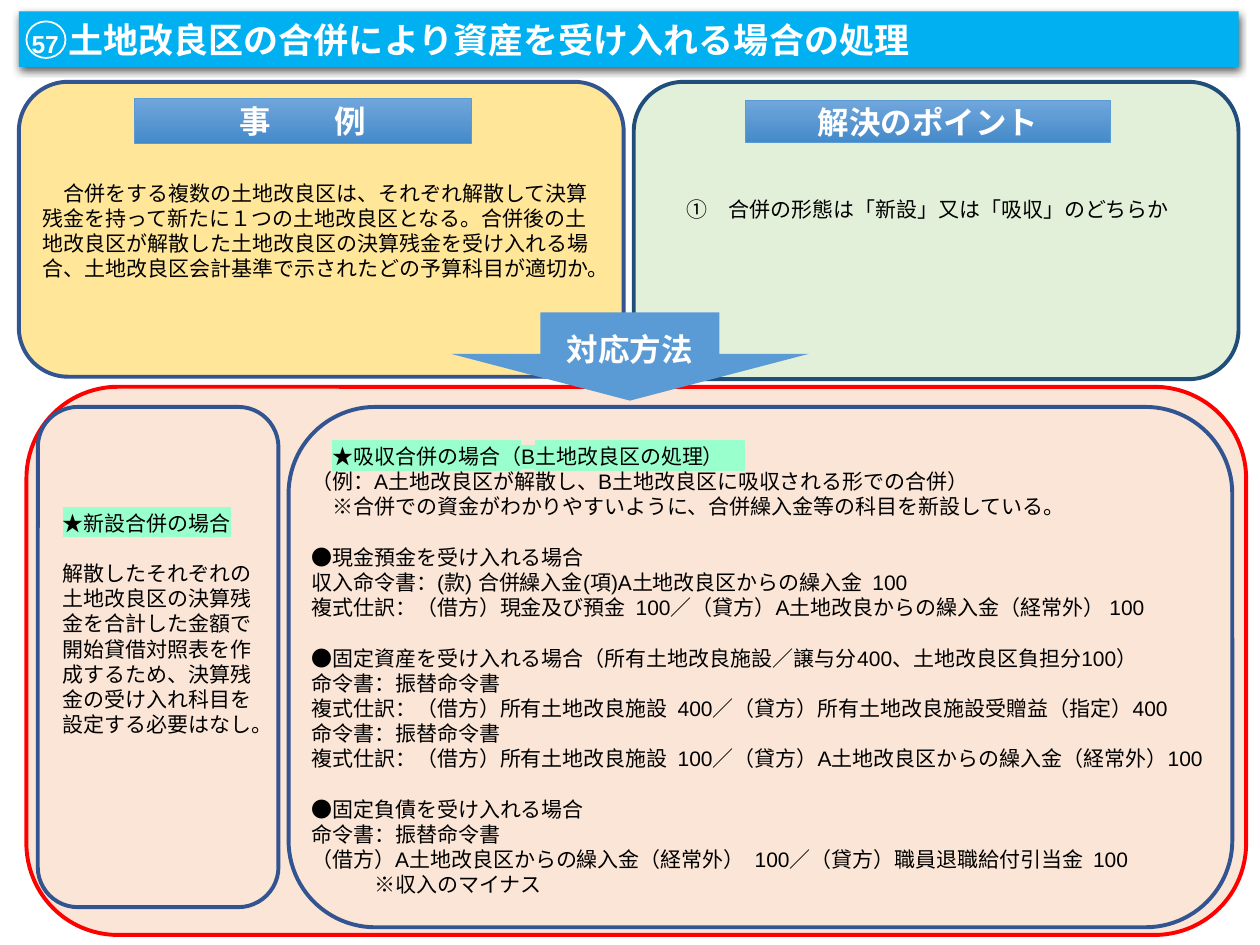
import pptx
import pptx.util
import pptx.dml.color
import pptx.enum.shapes
import pptx.enum.text
import pptx.oxml.ns
from lxml import etree

RGBColor = pptx.dml.color.RGBColor
Pt = pptx.util.Pt
SHAPE = pptx.enum.shapes.MSO_SHAPE
ANCHOR = pptx.enum.text.MSO_ANCHOR
ALIGN = pptx.enum.text.PP_ALIGN
qn = pptx.oxml.ns.qn

WHITE = RGBColor(0xFF, 0xFF, 0xFF)
BLACK = RGBColor(0x00, 0x00, 0x00)
SKY = RGBColor(0x00, 0xB0, 0xF0)
RED = RGBColor(0xFF, 0x00, 0x00)
PEACH = RGBColor(0xFB, 0xE5, 0xD6)
GREEN = RGBColor(0xE2, 0xF0, 0xD9)
YELLOW = RGBColor(0xFF, 0xE6, 0x99)
NAVY = RGBColor(0x32, 0x54, 0x91)
DEEP_BLUE = RGBColor(0x1F, 0x4E, 0x79)
BLUE = RGBColor(0x5B, 0x9B, 0xD5)
BLUE_LIGHT = RGBColor(0x71, 0xA6, 0xDB)
BLUE_DARK = RGBColor(0x44, 0x8A, 0xCA)
MINT = RGBColor(0x99, 0xFF, 0xCC)

COLUMNS, ROWS = 100, 75
CELL = pptx.util.Inches(10) // COLUMNS
LATIN, ASIAN = "Arial", "Noto Sans CJK JP"
BODY_SIZE, LINE_PITCH = 12, 14.4

CASE = ["合併をする複数の土地改良区は、それぞれ解散して決算残金を持って新たに１つの土地改良区となる。"
        "合併後の土地改良区が解散した土地改良区の決算残金を受け入れる場合、"
        "土地改良区会計基準で示されたどの予算科目が適切か。"]
POINT = ["①　合併の形態は「新設」又は「吸収」のどちらか"]
NEW_MERGER = [
    ["★新設合併の場合"],
    ["解散したそれぞれの土地改良区の決算残金を合計した金額で開始貸借対照表を作成するため、"
     "決算残金の受け入れ科目を設定する必要はなし。"],
]
ABSORPTION = [
    ["★吸収合併の場合（B土地改良区の処理）　",
     "（例：A土地改良区が解散し、B土地改良区に吸収される形での合併）",
     "※合併での資金がわかりやすいように、合併繰入金等の科目を新設している。"],
    ["●現金預金を受け入れる場合",
     "収入命令書：(款) 合併繰入金(項)A土地改良区からの繰入金  100",
     "複式仕訳：（借方）現金及び預金  100／（貸方）A土地改良からの繰入金（経常外） 100"],
    ["●固定資産を受け入れる場合（所有土地改良施設／譲与分400、土地改良区負担分100）",
     "命令書：振替命令書",
     "複式仕訳：（借方）所有土地改良施設  400／（貸方）所有土地改良施設受贈益（指定）400",
     "命令書：振替命令書",
     "複式仕訳：（借方）所有土地改良施設  100／（貸方）A土地改良区からの繰入金（経常外）100"],
    ["●固定負債を受け入れる場合",
     "命令書：振替命令書",
     "（借方）A土地改良区からの繰入金（経常外）  100／（貸方）職員退職給付引当金  100",
     "※収入のマイナス"],
]


def grid(*cells):
    return [round(cell * CELL) for cell in cells]


def move(shape, area):
    shape.left, shape.top, shape.width, shape.height = grid(*area)


def set_font(paragraph, size, color, bold=False):
    font = paragraph.font
    font.size, font.bold, font.name = Pt(size), bold, LATIN
    font.color.rgb = color
    properties = paragraph._p.pPr.find(qn("a:defRPr"))
    properties.find(qn("a:latin")).addnext(
        properties.makeelement(qn("a:ea"), {"typeface": ASIAN}))


def highlight(run, color):
    properties = run._r.get_or_add_rPr()
    mark = etree.SubElement(properties, qn("a:highlight"))
    etree.SubElement(mark, qn("a:srgbClr"), val=str(color))


def add_panel(slide, kind, area, fill=None, line=None, width=2.25):
    shape = slide.shapes.add_shape(kind, *grid(*area))
    shape.shadow.inherit = False
    if fill is None:
        shape.fill.background()
    else:
        shape.fill.solid()
        shape.fill.fore_color.rgb = fill
    if line is None:
        shape.line.fill.background()
    else:
        shape.line.color.rgb = line
        shape.line.width = Pt(width)
    return shape


def write_label(shape, text):
    frame = shape.text_frame
    frame.word_wrap = False
    frame.vertical_anchor = ANCHOR.MIDDLE
    paragraph = frame.paragraphs[0]
    paragraph.text = text
    paragraph.alignment = ALIGN.CENTER
    set_font(paragraph, 18, WHITE, True)


def add_heading(slide, area, text):
    shape = add_panel(slide, SHAPE.RECTANGLE, area, BLUE, BLUE, 0.5)
    shape.fill.gradient()
    shape.fill.gradient_angle = 270
    for stop, color in zip(shape.fill.gradient_stops, (BLUE_LIGHT, BLUE_DARK)):
        stop.color.rgb = color
    write_label(shape, text)


def write_body(shape, groups, indents=None, marked=False):
    frame = shape.text_frame
    frame.word_wrap = True
    frame.vertical_anchor = ANCHOR.TOP
    frame.auto_size = pptx.enum.text.MSO_AUTO_SIZE.NONE
    lines = [(text, group and not row) for group, texts in enumerate(groups)
             for row, text in enumerate(texts)]
    for index, (text, starts_group) in enumerate(lines):
        paragraph = frame.paragraphs[0] if index == 0 else frame.add_paragraph()
        run = paragraph.add_run()
        run.text = text
        paragraph.alignment = ALIGN.LEFT
        paragraph.line_spacing = Pt(LINE_PITCH)
        paragraph.space_before = Pt(LINE_PITCH if starts_group else 0)
        properties = paragraph._p.get_or_add_pPr()
        properties.set("marL", "0")
        properties.set("indent", str(Pt(BODY_SIZE * (indents or {}).get(index, 0))))
        etree.SubElement(properties, qn("a:buNone"))
        set_font(paragraph, BODY_SIZE, BLACK)
        if marked and index == 0:
            highlight(run, MINT)


def add_body(slide, area, groups, **options):
    write_body(slide.shapes.add_textbox(*grid(*area)), groups, **options)


def add_title(slide):
    title = slide.shapes.title
    move(title, (1.5, 0.9, 96.8, 4.4))
    title.fill.solid()
    title.fill.fore_color.rgb = SKY
    frame = title.text_frame
    frame.vertical_anchor = ANCHOR.MIDDLE
    paragraph = frame.paragraphs[0]
    paragraph.alignment = ALIGN.LEFT
    set_font(paragraph, 20, WHITE, True)
    number = paragraph.add_run()
    number.text = "57"
    number.font.size = Pt(14)
    paragraph.add_run().text = " 土地改良区の合併により資産を受け入れる場合の処理"
    effects = etree.SubElement(title._element.spPr, qn("a:effectLst"))
    shadow = etree.SubElement(effects, qn("a:outerShdw"), blurRad=str(Pt(4.5)),
                              dist=str(Pt(1.5)), dir="5400000", rotWithShape="0")
    color = etree.SubElement(shadow, qn("a:srgbClr"), val=str(BLACK))
    etree.SubElement(color, qn("a:alpha"), val="63000")
    add_panel(slide, SHAPE.OVAL, (2.1, 1.7, 3.1, 2.9), line=WHITE, width=1)


def add_arrow(slide):
    arrow = add_panel(slide, SHAPE.DOWN_ARROW, (35.8, 24.8, 28.4, 7), BLUE)
    arrow.adjustments[1] = 0.53
    write_label(slide.shapes.add_textbox(*grid(43.8, 25.7, 12.4, 4)), "対応方法")


def main():
    presentation = pptx.Presentation()
    presentation.slide_width, presentation.slide_height = grid(COLUMNS, ROWS)
    slide = presentation.slides.add_slide(presentation.slide_layouts[1])
    rounded = SHAPE.ROUNDED_RECTANGLE

    add_title(slide)
    add_panel(slide, rounded, (2.1, 30.7, 96.8, 43.5), PEACH, RED)
    add_panel(slide, rounded, (50.3, 6.5, 48, 23.6), GREEN, DEEP_BLUE)
    add_body(slide, (53.5, 15.1, 41.6, 5), [POINT])
    add_heading(slide, (59.2, 8, 28.9, 3.3), "解決のポイント")
    add_panel(slide, rounded, (1.5, 6.5, 48, 23.4), YELLOW, NAVY)
    add_body(slide, (2.4, 13.8, 46.2, 9.1), [CASE], indents={0: 1})
    add_heading(slide, (10.7, 7.8, 26.7, 3.6), "事　　例")
    add_arrow(slide)
    add_panel(slide, rounded, (3, 32.3, 19.1, 39.7), line=NAVY)
    add_body(slide, (4, 40, 18, 21.2), NEW_MERGER, marked=True)
    add_panel(slide, rounded, (22.9, 32.3, 74.9, 41.3), line=NAVY)
    body = slide.placeholders[1]
    move(body, (23.7, 34.7, 75.2, 37.4))
    write_body(body, ABSORPTION, indents={0: 1, 2: 1, 14: 3}, marked=True)
    slide.shapes._spTree.append(body._element)
    presentation.save("out.pptx")


if __name__ == "__main__":
    main()
